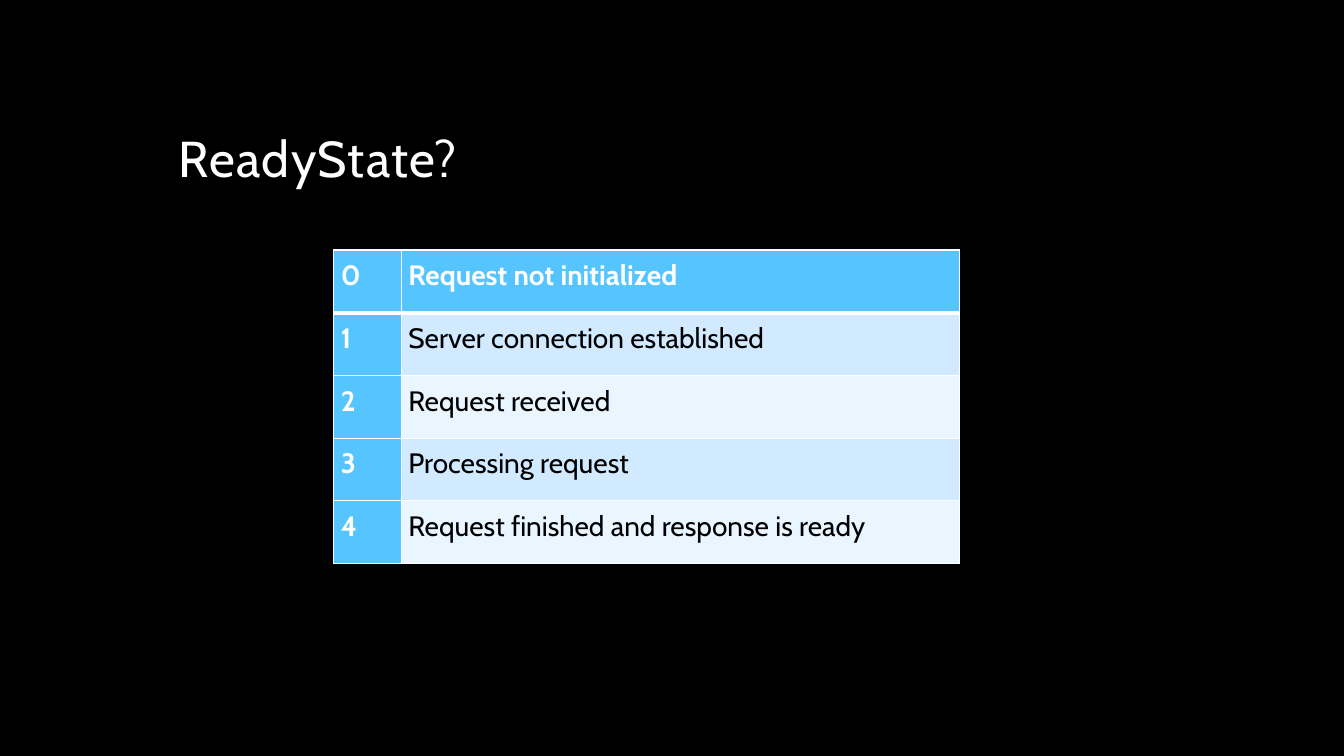
from dataclasses import dataclass

from lxml.etree import SubElement
from pptx import Presentation
from pptx.dml.color import RGBColor
from pptx.enum.text import MSO_ANCHOR, MSO_AUTO_SIZE, PP_ALIGN
from pptx.oxml.ns import qn
from pptx.slide import Slide
from pptx.table import _Cell
from pptx.text.text import TextFrame
from pptx.util import Cm, Pt


@dataclass(frozen=True)
class Theme:
    font: str = "Cabin"
    background: str = "000000"
    light: str = "FFFFFF"
    dark: str = "000000"
    accent: str = "56C5FF"
    bands: tuple[str, str] = ("E9F5FF", "D1EAFF")
    title_size: int = 36
    table_size: int = 20
    thin: int = 1
    thick: int = 3


@dataclass(frozen=True)
class State:
    code: int
    meaning: str
    align: PP_ALIGN = PP_ALIGN.JUSTIFY


THEME = Theme()
STATES = [
    State(0, "Request not initialized"),
    State(1, "Server connection established"),
    State(2, "Request received"),
    State(3, "Processing request"),
    State(4, "Request finished and response is ready", PP_ALIGN.LEFT),
]
COL_WIDTHS = (1.7, 14.07)
ROW_HEIGHT = 1.58


def write(tf: TextFrame, text: str, *, size: int, color: str, bold: bool = False,
          align: PP_ALIGN = PP_ALIGN.LEFT, line_spacing: float = 1.0,
          tracking: int = 0) -> None:
    """Put one formatted paragraph in a text frame; tracking is in points."""
    p = tf.paragraphs[0]
    p.alignment = align
    p.line_spacing = line_spacing
    r = p.add_run()
    r.text = text
    r.font.name = THEME.font
    r.font.size = Pt(size)
    r.font.bold = bold
    r.font.color.rgb = RGBColor.from_string(color)
    if tracking:
        r._r.get_or_add_rPr().set("spc", str(tracking * 100))


def set_borders(cell: _Cell, top: int, bottom: int) -> None:
    """Draw the four cell borders, thin at the sides."""
    tcPr = cell._tc.get_or_add_tcPr()
    widths = {"a:lnL": THEME.thin, "a:lnR": THEME.thin, "a:lnT": top, "a:lnB": bottom}
    for tag, width in widths.items():
        ln = SubElement(tcPr, qn(tag), w=str(Pt(width)))
        fill = SubElement(ln, qn("a:solidFill"))
        SubElement(fill, qn("a:srgbClr"), val=THEME.light)


def add_title(s: Slide, text: str) -> None:
    sp = s.shapes.title
    sp.left, sp.top, sp.width, sp.height = Cm(4.24), Cm(1.07), Cm(25.4), Cm(3.81)
    tf = sp.text_frame
    tf.word_wrap = True
    tf.auto_size = MSO_AUTO_SIZE.NONE
    tf.vertical_anchor = MSO_ANCHOR.BOTTOM
    write(tf, text, size=THEME.title_size, color=THEME.light,
          line_spacing=0.9, tracking=1)


def add_state_table(s: Slide, states: list[State]) -> None:
    table = s.shapes.add_table(
        len(states), len(COL_WIDTHS), Cm(8.41), Cm(6.3),
        Cm(sum(COL_WIDTHS)), Cm(ROW_HEIGHT * len(states))).table
    for column, width in zip(table.columns, COL_WIDTHS):
        column.width = Cm(width)

    for i, state in enumerate(states):
        table.rows[i].height = Cm(ROW_HEIGHT)
        for j, text in enumerate((str(state.code), state.meaning)):
            cell = table.cell(i, j)
            heading = i == 0 or j == 0
            # The rule under the first row is thick
            set_borders(cell, top=THEME.thick if i == 1 else THEME.thin,
                        bottom=THEME.thick if i == 0 else THEME.thin)
            cell.fill.solid()
            cell.fill.fore_color.rgb = RGBColor.from_string(
                THEME.accent if heading else THEME.bands[i % 2])
            cell.margin_left = cell.margin_right = Cm(0.18)
            cell.margin_top = cell.margin_bottom = 0
            write(cell.text_frame, text, size=THEME.table_size,
                  color=THEME.light if heading else THEME.dark, bold=heading,
                  align=state.align if j else PP_ALIGN.JUSTIFY, line_spacing=1.25)


def main() -> None:
    prs = Presentation()
    prs.slide_width, prs.slide_height = Cm(33.87), Cm(19.05)
    s = prs.slides.add_slide(prs.slide_layouts.get_by_name("Title Only"))

    # Background
    s.background.fill.solid()
    s.background.fill.fore_color.rgb = RGBColor.from_string(THEME.background)

    # Content
    add_title(s, "ReadyState?")
    add_state_table(s, STATES)
    prs.save("out.pptx")


if __name__ == "__main__":
    main()
